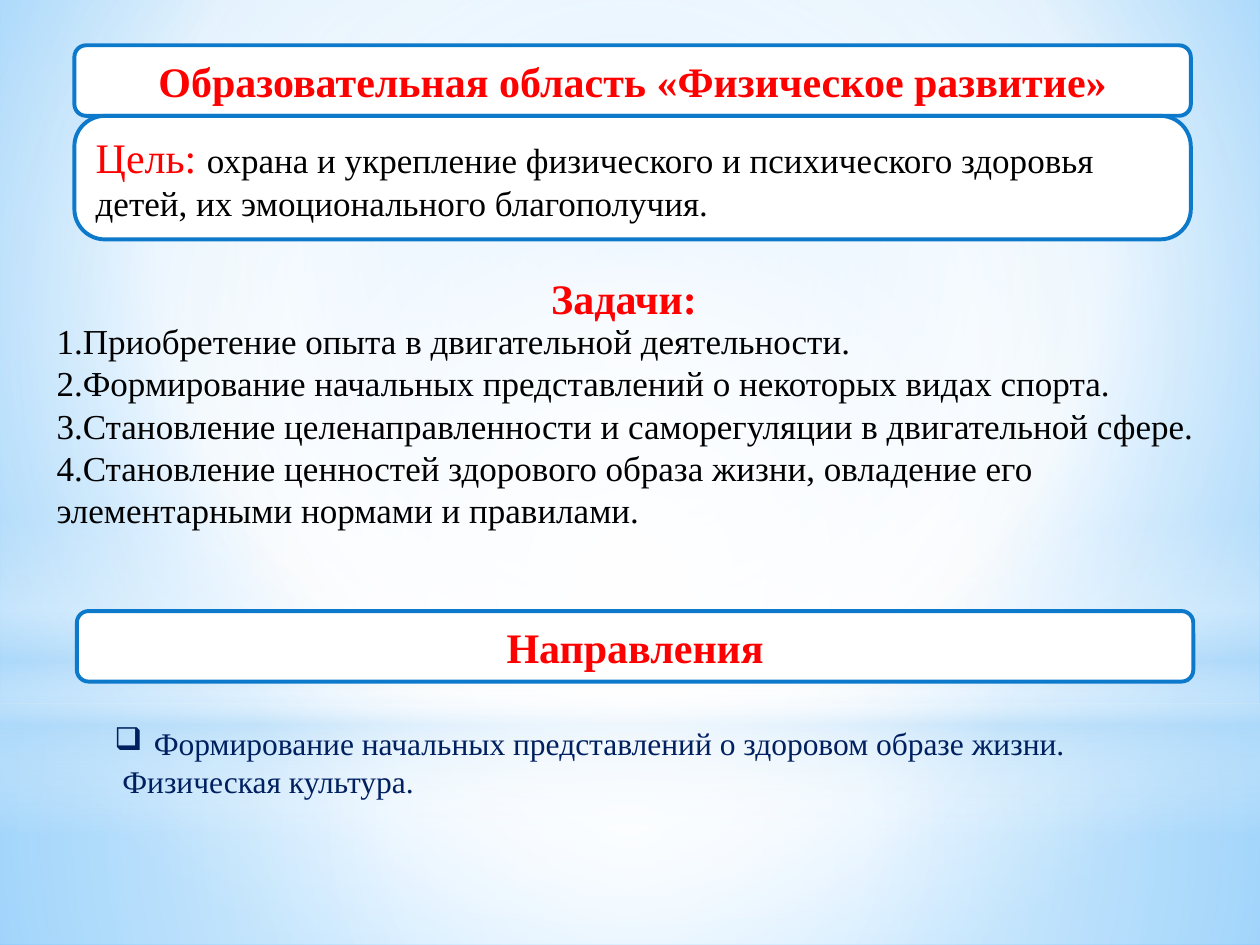
from pptx import Presentation
from pptx.dml.color import RGBColor
from pptx.enum import shapes, text
from pptx.oxml import parse_xml
from pptx.oxml.ns import nsdecls, qn
from pptx.util import Pt

RED = RGBColor(0xFF, 0x00, 0x00)
BLACK = RGBColor(0x00, 0x00, 0x00)
NAVY = RGBColor(0x00, 0x20, 0x60)
BLUE = RGBColor(0x0D, 0x79, 0xCA)
WHITE = RGBColor(0xFF, 0xFF, 0xFF)
SKY = RGBColor(0xB4, 0xDC, 0xFA)
PALE = RGBColor(0x9E, 0xD5, 0xFF)
DEEP = RGBColor(0x5B, 0xB9, 0xFF)
FONT = "Times New Roman"
MID = (50, 50, 50, 50)


def fade(fill, root, stops, rect):
    """Give a gradient of (place, colour, opacity) stops: round in rect, or top to bottom if None."""
    fill.solid()
    marks = "".join(
        f'<a:gs pos="{pos * 1000}"><a:srgbClr val="{tint}">'
        f'<a:alpha val="{alpha * 1000}"/></a:srgbClr></a:gs>'
        for pos, tint, alpha in stops)
    if rect:
        left, top, right, low = (side * 1000 for side in rect)
        kind = (f'<a:path path="circle"><a:fillToRect l="{left}" t="{top}" '
                f'r="{right}" b="{low}"/></a:path>')
    else:
        kind = '<a:lin ang="5400000" scaled="0"/>'
    old = next(root.iter(qn("a:solidFill")))
    old.getparent().replace(old, parse_xml(
        f'<a:gradFill {nsdecls("a")} rotWithShape="1">'
        f'<a:gsLst>{marks}</a:gsLst>{kind}</a:gradFill>'))


def write(shape, paras, align, anchor):
    """Fill a shape with paragraphs, each a list of (words, size, colour, bold) runs."""
    frame = shape.text_frame
    frame.word_wrap = True
    frame.vertical_anchor = anchor
    for i, runs in enumerate(paras):
        para = frame.add_paragraph() if i else frame.paragraphs[0]
        para.alignment = align
        for words, size, tint, bold in runs:
            run = para.add_run()
            run.text = words
            run.font.name = FONT
            run.font.size = Pt(size)
            run.font.bold = bold
            run.font.color.rgb = tint


deck = Presentation()
deck.slide_width, deck.slide_height = Pt(720), Pt(540)
slide = deck.slides.add_slide(deck.slide_layouts[6])
kinds = shapes.MSO_SHAPE
left, center = text.PP_ALIGN.LEFT, text.PP_ALIGN.CENTER
top, middle, bottom = (text.MSO_ANCHOR.TOP, text.MSO_ANCHOR.MIDDLE,
                       text.MSO_ANCHOR.BOTTOM)

# Soft sky backdrop
fade(slide.background.fill, slide.element,
     [(0, PALE, 100), (60, WHITE, 100), (100, DEEP, 100)], (20, 10, 20, 60))
layers = [
    (kinds.RECTANGLE, 401.8, 138.2, MID,
     [(0, WHITE, 91), (37, WHITE, 76), (100, SKY, 79)]),
    (kinds.RECTANGLE, 0, 401.8, MID,
     [(0, WHITE, 89), (48, WHITE, 62), (100, SKY, 79)]),
    (kinds.RECTANGLE, 296.6, 180, None,
     [(0, WHITE, 0), (29, WHITE, 30), (45, SKY, 40),
      (55, WHITE, 26), (65, SKY, 60), (100, WHITE, 0)]),
    (kinds.OVAL, 126, 401.8, MID, [(0, WHITE, 100), (56, WHITE, 0)]),
]
for kind, y, high, rect, stops in layers:
    layer = slide.shapes.add_shape(kind, 0, Pt(y), Pt(720), Pt(high))
    layer.shadow.inherit = False
    layer.line.fill.background()
    fade(layer.fill, layer.element.spPr, stops, rect)

# Framed headings and the goal
frames = [
    (42.5, 25.9, 40.3, 0.167, center,
     [("Образовательная область «Физическое развитие»", 24, RED, True)]),
    (42.5, 66.2, 70.6, 0.247, left,
     [("Цель: ", 24, RED, False),
      ("охрана и укрепление физического и психического здоровья детей, "
       "их эмоционального благополучия.", 20, BLACK, False)]),
    (43.9, 349.2, 40.3, 0.167, center, [("Направления", 24, RED, True)]),
]
for x, y, high, curve, align, runs in frames:
    box = slide.shapes.add_shape(kinds.ROUNDED_RECTANGLE,
                                 Pt(x), Pt(y), Pt(638), Pt(high))
    box.adjustments[0] = curve
    box.shadow.inherit = False
    box.fill.solid()
    box.fill.fore_color.rgb = WHITE
    box.line.color.rgb = BLUE
    box.line.width = Pt(2.25)
    write(box, [runs], align, middle)

# Tasks
head = slide.shapes.add_textbox(Pt(58.3), Pt(122.4), Pt(602.6), Pt(65.5))
write(head, [[("Задачи: ", 24, RED, True)]], center, bottom)

tasks = [
    "Приобретение опыта в двигательной деятельности.",
    "Формирование начальных представлений о некоторых видах спорта.",
    "Становление целенаправленности и саморегуляции в двигательной сфере.",
    "Становление ценностей здорового образа жизни, овладение его "
    "элементарными нормами и правилами.",
]
body = slide.shapes.add_textbox(Pt(25.2), Pt(179.3), Pt(673.2), Pt(128.2))
write(body, [[(f"{n}.{task}", 20, BLACK, False)]
             for n, task in enumerate(tasks, 1)], left, top)

# Directions
paths = ["Формирование начальных представлений о здоровом образе жизни.",
         " Физическая культура."]
area = slide.shapes.add_textbox(Pt(58.3), Pt(410.4), Pt(622.8), Pt(72.7))
write(area, [[(words, 18, NAVY, False)] for words in paths], left, top)
props = area.text_frame.paragraphs[0]._p.get_or_add_pPr()
props.set("marL", str(Pt(22.5)))
props.set("indent", str(-Pt(22.5)))
props.append(parse_xml(f'<a:buChar {nsdecls("a")} char="❑"/>'))

deck.save("out.pptx")
